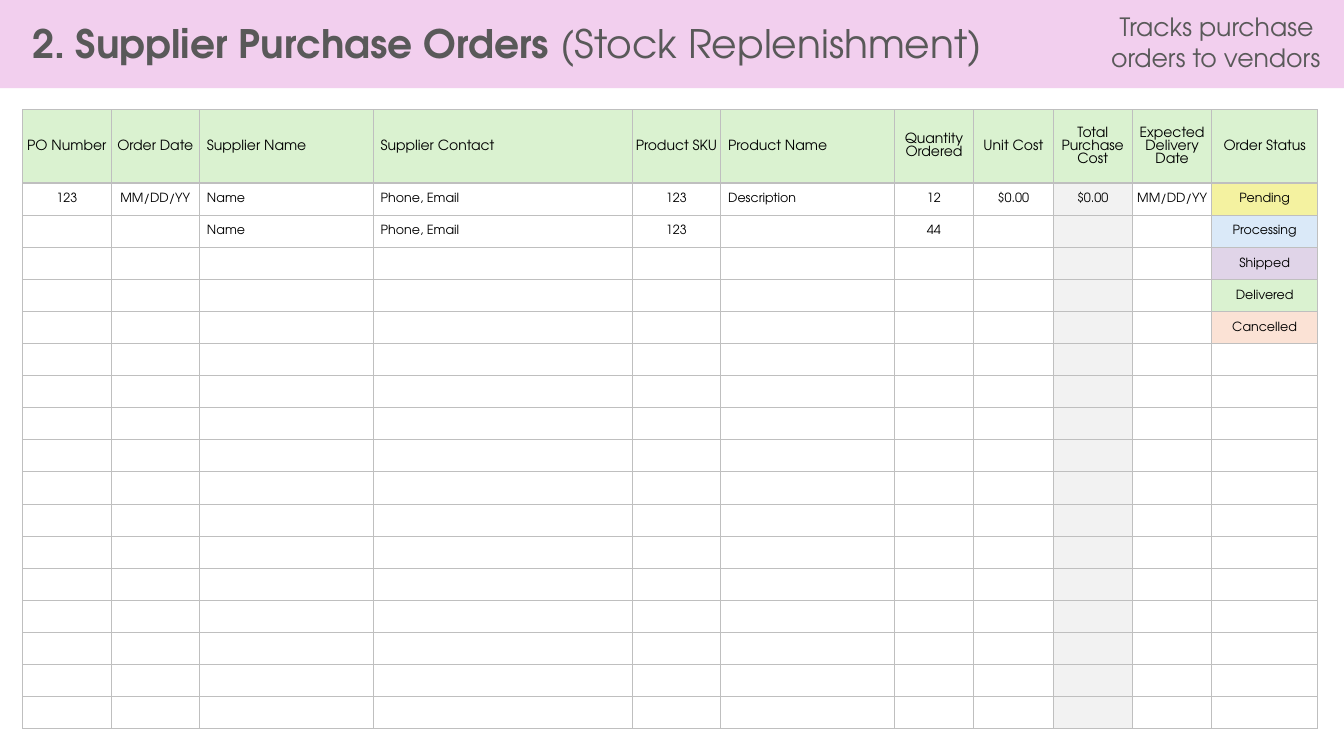
import lxml.etree
import pptx
import pptx.dml.color
import pptx.enum.shapes
import pptx.enum.text
import pptx.oxml.ns
import pptx.util

Pt = pptx.util.Pt
Align = pptx.enum.text.PP_ALIGN
Anchor = pptx.enum.text.MSO_ANCHOR
qn = pptx.oxml.ns.qn


def color(code):
    return pptx.dml.color.RGBColor.from_string(code)


def write(para, text, font="TeX Gyre Adventor", size=9, ink="000000",
          bold=False, align=Align.LEFT):
    para.alignment = align
    for i, line in enumerate(text.split("\n")):
        if i:
            para.add_line_break()
        if line:
            run = para.add_run()
            run.text = line
            run.font.name = font
            run.font.size = Pt(size)
            run.font.bold = bold
            run.font.color.rgb = color(ink)
    if not text:
        lxml.etree.SubElement(para._p, qn("a:endParaRPr"), sz=str(size * 100))


class Sheet:
    ink = "595959"
    rule = "BFBFBF"
    head = "DAF2D0"

    def __init__(self, deck):
        self.slide = deck.slides.add_slide(deck.slide_layouts[5])
        self.shapes = self.slide.shapes

    def band(self, x, y, w, h, fill):
        kind = pptx.enum.shapes.MSO_SHAPE.RECTANGLE
        band = self.shapes.add_shape(kind, Pt(x), Pt(y), Pt(w), Pt(h))
        band.shadow.inherit = False
        band.fill.solid()
        band.fill.fore_color.rgb = color(fill)
        band.line.fill.background()
        self.shapes.element.insert(2, band.element)

    def frame(self, box):
        frame = box.text_frame
        frame.word_wrap = True
        frame.auto_size = pptx.enum.text.MSO_AUTO_SIZE.NONE
        frame.vertical_anchor = Anchor.MIDDLE
        return frame.paragraphs[0]

    def title(self, x, y, w, h, lead, rest):
        box = self.shapes.title
        box.left, box.top, box.width, box.height = Pt(x), Pt(y), Pt(w), Pt(h)
        para = self.frame(box)
        write(para, lead, size=28, ink=self.ink, bold=True)
        write(para, rest, size=28, ink=self.ink)

    def note(self, x, y, w, h, text):
        box = self.shapes.add_textbox(Pt(x), Pt(y), Pt(w), Pt(h))
        write(self.frame(box), text, size=18, ink=self.ink, align=Align.RIGHT)

    def edge(self, cell, row):
        props = cell._tc.get_or_add_tcPr()
        for i, side in enumerate("LRTB"):
            thick = (row, side) in ((0, "B"), (1, "T"))
            line = lxml.etree.Element(qn("a:ln" + side), w=str(Pt(1.5 if thick else 0.5)))
            fill = lxml.etree.SubElement(line, qn("a:solidFill"))
            lxml.etree.SubElement(fill, qn("a:srgbClr"), val=self.rule)
            props.insert(i, line)

    def cell(self, cell, row, text, fill, left):
        cell.margin_left = Pt(5.4 if left else 0.7)
        cell.margin_right = cell.margin_top = Pt(0.7)
        cell.margin_bottom = 0
        cell.vertical_anchor = Anchor.MIDDLE
        cell.fill.solid()
        cell.fill.fore_color.rgb = color(fill)
        self.edge(cell, row)
        write(cell.text_frame.paragraphs[0], text, size=9 if row else 10,
              align=Align.LEFT if left else Align.CENTER)

    def table(self, x, y, cols, rows, data, states):
        grid = self.shapes.add_table(len(rows), len(cols), Pt(x), Pt(y),
                                     Pt(sum(cols)), Pt(sum(rows))).table
        grid.first_row = grid.horz_banding = False
        for col, width in zip(grid.columns, cols):
            col.width = Pt(width)
        for row, height in zip(grid.rows, rows):
            row.height = Pt(height)
        total = data[0].index("Total Purchase Cost")
        lefts = {i for i, name in enumerate(data[0])
                 if name.startswith("Supplier") or name == "Product Name"}
        last = len(cols) - 1
        for r in range(len(rows)):
            line = data[r] if r < len(data) else [""] * last
            state, tint = states[r - 1] if 0 < r <= len(states) else ("", "FFFFFF")
            for c in range(len(cols)):
                text = line[c] if c < len(line) else state
                fill = self.head if r == 0 else tint if c == last else "FFFFFF"
                if r and c == total:
                    fill = "F2F2F2"
                self.cell(grid.cell(r, c), r, text, fill, c in lefts)


def main():
    deck = pptx.Presentation()
    deck.slide_width, deck.slide_height = Pt(960), Pt(540)
    sheet = Sheet(deck)
    sheet.band(0, 0, 960, 63, "F2CFEE")
    sheet.title(15.8, 10.4, 700, 41, "2. Supplier Purchase Orders ",
                "(Stock Replenishment)")
    sheet.note(706.3, 4.4, 244, 51, "Tracks purchase \norders to vendors")
    data = [
        ["PO Number", "Order Date", "Supplier Name", "Supplier Contact",
         "Product SKU", "Product Name", "Quantity Ordered", "Unit Cost",
         "Total Purchase Cost", "Expected Delivery Date", "Order Status"],
        ["123", "MM/DD/YY", "Name", "Phone, Email", "123", "Description",
         "12", "$0.00", "$0.00", "MM/DD/YY"],
        ["", "", "Name", "Phone, Email", "123", "", "44", "", "", ""],
    ]
    states = [("Pending", "F4F2A0"), ("Processing", "DAE9F8"),
              ("Shipped", "E0D4E8"), ("Delivered", "DAF2D0"),
              ("Cancelled", "FBE2D5")]
    cols = [63.2, 63.2, 124.1, 185, 63.2, 124.1] + [56.7] * 4 + [75.5]
    sheet.table(16.1, 78.1, cols, [52.5] + [22.96] * 17, data, states)
    deck.save("out.pptx")


if __name__ == "__main__":
    main()
